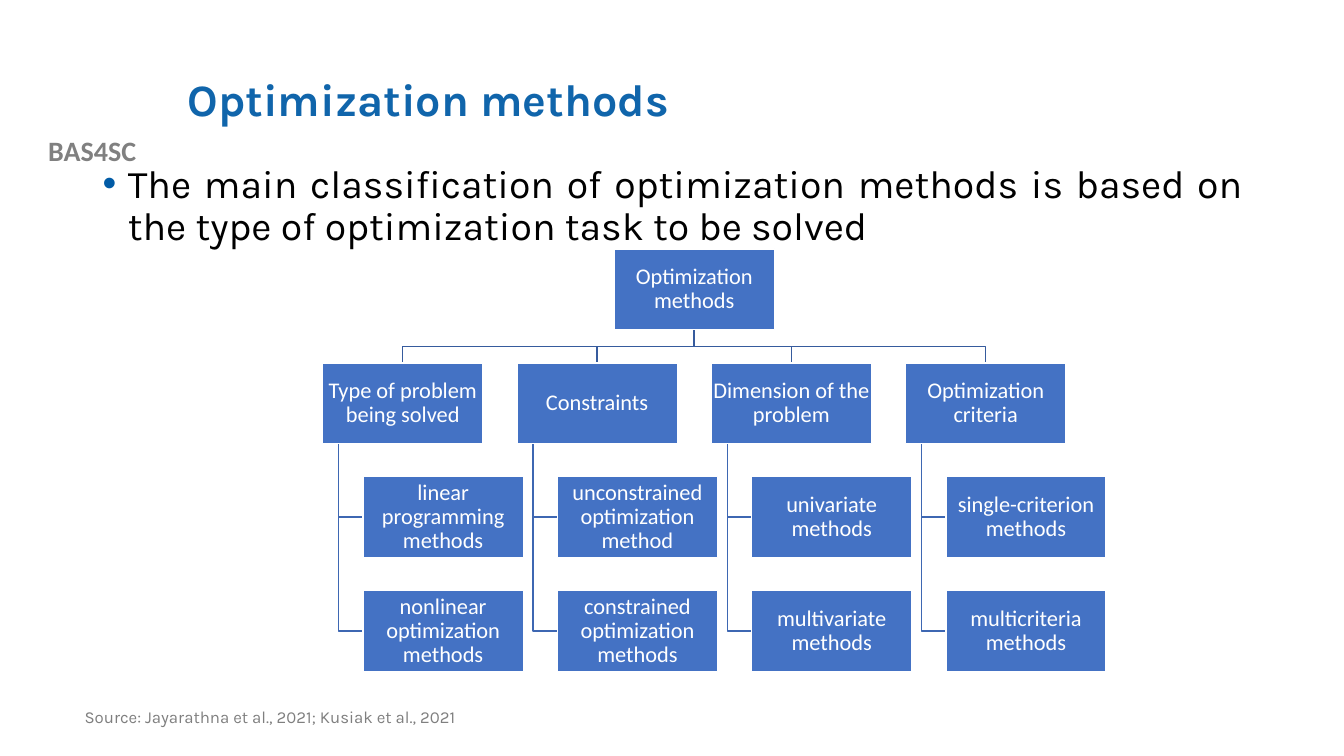
from lxml import etree
from pptx import Presentation
from pptx.dml.color import RGBColor
from pptx.enum.shapes import MSO_SHAPE
from pptx.enum.text import MSO_ANCHOR, PP_ALIGN
from pptx.oxml.ns import qn
from pptx.util import Inches, Pt

RECTANGLE = MSO_SHAPE.RECTANGLE
TOP, MIDDLE = MSO_ANCHOR.TOP, MSO_ANCHOR.MIDDLE
LEFT, CENTER, JUSTIFY = PP_ALIGN.LEFT, PP_ALIGN.CENTER, PP_ALIGN.JUSTIFY

TITLE = "Optimization methods"
PROJECT = "BAS4SC"
STATEMENT = ("The main classification of optimization methods is based on "
             "the type of optimization task to be solved")
SOURCE = "Source: Jayarathna et al., 2021; Kusiak et al., 2021"
ROOT = "Optimization methods"
BRANCHES = [
    ("Type of problem being solved",
     ["linear programming methods", "nonlinear optimization methods"]),
    ("Constraints",
     ["unconstrained optimization method", "constrained optimization methods"]),
    ("Dimension of the problem",
     ["univariate methods", "multivariate methods"]),
    ("Optimization criteria",
     ["single-criterion methods", "multicriteria methods"]),
]

SLIDE_W, SLIDE_H = 13.33, 7.5
TREE_LEFT, TREE_TOP = 3.2, 2.47
BOX_W, BOX_H = 1.59, 0.8
COLUMN_STEP, ROW_STEP = 1.927, 1.13
LEAF_INDENT, STEM_INDENT = 0.4, 0.16
BOX_FILL, BOX_EDGE = "4472C4", "FFFFFF"
TRUNK_COLOR, STEM_COLOR = "365B9D", "3E67B2"


def color(hex_value):
    return RGBColor.from_string(hex_value)


def write(shape, text, size, font, ink, align=LEFT, anchor=TOP, bold=False,
          spacing=0.9, inset=None):
    frame = shape.text_frame
    frame.word_wrap = True
    frame.vertical_anchor = anchor
    if inset is not None:
        frame.margin_left = frame.margin_right = Inches(inset)
        frame.margin_top = frame.margin_bottom = Inches(inset)
    frame.text = text
    paragraph = frame.paragraphs[0]
    paragraph.alignment = align
    paragraph.line_spacing = spacing
    run_font = paragraph.runs[0].font
    run_font.size, run_font.name, run_font.bold = Pt(size), font, bold
    run_font.color.rgb = color(ink)
    return paragraph


def text_area(left, top, width, height):
    return slide.shapes.add_textbox(
        Inches(left), Inches(top), Inches(width), Inches(height))


def add_bullet(paragraph, character, ink, indent):
    properties = paragraph._p.get_or_add_pPr()
    properties.set("marL", str(Inches(indent)))
    properties.set("indent", str(-Inches(indent)))
    bullet_color = etree.SubElement(properties, qn("a:buClr"))
    etree.SubElement(bullet_color, qn("a:srgbClr"), val=ink)
    etree.SubElement(properties, qn("a:buFont"), typeface="Arial")
    etree.SubElement(properties, qn("a:buChar"), char=character)


def draw_branch_line(points, ink):
    corners = [(Inches(x), Inches(y)) for x, y in points]
    builder = slide.shapes.build_freeform(*corners[0])
    builder.add_line_segments(corners[1:], close=False)
    line = builder.convert_to_shape()
    line.shadow.inherit = False
    line.fill.background()
    line.line.color.rgb = color(ink)
    line.line.width = Pt(1)


def draw_box(left, top, label):
    box = slide.shapes.add_shape(
        RECTANGLE, Inches(left), Inches(top), Inches(BOX_W), Inches(BOX_H))
    box.shadow.inherit = False
    box.fill.solid()
    box.fill.fore_color.rgb = color(BOX_FILL)
    box.line.color.rgb = color(BOX_EDGE)
    box.line.width = Pt(1)
    write(box, label, 16, "Calibri", "FFFFFF", CENTER, MIDDLE, inset=0.01)


def row_top(row):
    return TREE_TOP + row * ROW_STEP


prs = Presentation()
prs.slide_width, prs.slide_height = Inches(SLIDE_W), Inches(SLIDE_H)
slide = prs.slides.add_slide(prs.slide_layouts[5])

title = slide.shapes.title
title.left, title.top = Inches(1.76), Inches(0.4)
title.width, title.height = Inches(10.66), Inches(1.22)
write(title, TITLE, 32, "Karla", "1065AB", anchor=MIDDLE, bold=True)

write(text_area(0, 1.28, 1.83, 0.44), PROJECT, 20, "Calibri", "808080",
      CENTER, bold=True, spacing=1.0)
statement = write(text_area(0.92, 1.58, 11.5, 1.22), STATEMENT, 28, "Karla",
                  "000000", JUSTIFY)
add_bullet(statement, "•", "015BA6", 0.25)
write(text_area(0.74, 6.98, 5.01, 0.52), SOURCE, 12, "Karla", "7F7F7F")

root_left = TREE_LEFT + (len(BRANCHES) - 1) * COLUMN_STEP / 2
root_center = root_left + BOX_W / 2
bus_y = (row_top(0) + BOX_H + row_top(1)) / 2
boxes = [(root_left, row_top(0), ROOT)]

for column, (branch, leaves) in enumerate(BRANCHES):
    left = TREE_LEFT + column * COLUMN_STEP
    center, stem_x = left + BOX_W / 2, left + STEM_INDENT
    boxes.append((left, row_top(1), branch))
    draw_branch_line([(root_center, row_top(0) + BOX_H), (root_center, bus_y),
                      (center, bus_y), (center, row_top(1))], TRUNK_COLOR)
    for row, leaf in enumerate(leaves, start=2):
        leaf_left, leaf_middle = left + LEAF_INDENT, row_top(row) + BOX_H / 2
        boxes.append((leaf_left, row_top(row), leaf))
        draw_branch_line([(stem_x, row_top(1) + BOX_H), (stem_x, leaf_middle),
                          (leaf_left, leaf_middle)], STEM_COLOR)

for box_left, box_top, label in boxes:
    draw_box(box_left, box_top, label)

prs.save("out.pptx")
